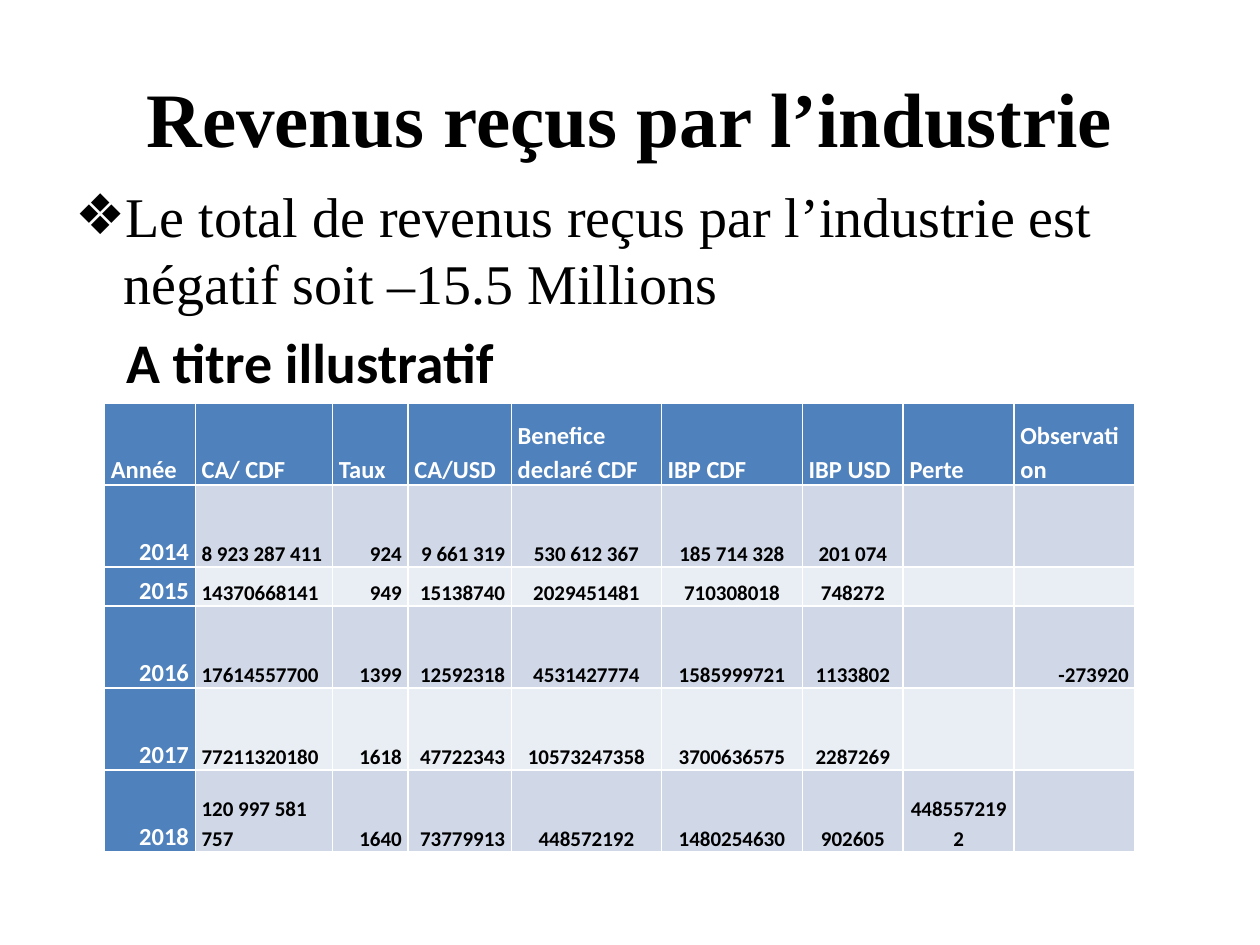
"""Build the slide on the revenues received by the industry."""
from lxml import etree
from pptx import Presentation
from pptx.dml.color import RGBColor
from pptx.enum.text import MSO_ANCHOR, PP_ALIGN
from pptx.oxml.ns import qn
from pptx.util import Inches, Pt

LEFT, CENTER, RIGHT = PP_ALIGN.LEFT, PP_ALIGN.CENTER, PP_ALIGN.RIGHT
MIDDLE, BOTTOM = MSO_ANCHOR.MIDDLE, MSO_ANCHOR.BOTTOM

COLORS = {"text": "000000", "header": "4F81BD", "header_text": "FFFFFF",
          "odd_row": "D0D8E8", "even_row": "E9EDF4"}
SERIF, SANS = "Times New Roman", "Calibri"

HEADINGS = ["Année", "CA/ CDF", "Taux", "CA/USD", "Benefice declaré CDF",
            "IBP CDF", "IBP USD", "Perte", "Observation"]
YEARS = [
    ["2014", "8 923 287 411", "924", "9 661 319", "530 612 367",
     "185 714 328", "201 074", "", ""],
    ["2015", "14370668141", "949", "15138740", "2029451481",
     "710308018", "748272", "", ""],
    ["2016", "17614557700", "1399", "12592318", "4531427774",
     "1585999721", "1133802", "", "-273920"],
    ["2017", "77211320180", "1618", "47722343", "10573247358",
     "3700636575", "2287269", "", ""],
    ["2018", "120 997 581 757", "1640", "73779913", "448572192",
     "1480254630", "902605", "4485572192", ""],
]
COLUMN_WIDTHS = [0.72, 1.09, 0.6, 0.82, 1.19, 1.12, 0.8, 0.88, 0.96]
ROW_HEIGHTS = [0.65, 0.65, 0.31, 0.65, 0.65, 0.65]
COLUMN_ALIGNS = [RIGHT, LEFT, RIGHT, RIGHT, CENTER, CENTER, CENTER, CENTER, RIGHT]
CELL_FORMAT = {"margin_left": Inches(0.05), "margin_right": Inches(0.05),
               "margin_top": 0, "margin_bottom": 0, "vertical_anchor": BOTTOM}


class SlideBuilder:
    """Holds the current slide and its style."""

    def __init__(self, slide):
        """Keep the slide to fill."""
        self.slide = slide

    def apply(self, target, values):
        """Set each attribute from a dict of format values."""
        for attribute, value in values.items():
            setattr(target, attribute, value)

    def place(self, placeholder, left, top, width, height):
        """Move and size a placeholder."""
        self.apply(placeholder, {"left": Inches(left), "top": Inches(top),
                                 "width": Inches(width), "height": Inches(height)})

    def add_text(self, paragraph, text, size, font=SANS, color="text", bold=False):
        """Add a formatted run to a paragraph."""
        run = paragraph.add_run()
        run.text = text
        self.apply(run.font, {"size": Pt(size), "name": font, "bold": bold})
        run.font.color.rgb = RGBColor.from_string(COLORS[color])

    def title(self, text, box):
        """Fill the title placeholder."""
        heading = self.slide.shapes.title
        self.place(heading, *box)
        heading.text_frame.vertical_anchor = MIDDLE
        paragraph = heading.text_frame.paragraphs[0]
        paragraph.alignment = CENTER
        self.add_text(paragraph, text, 44, SERIF, bold=True)

    def body(self, statement, caption, box):
        """Fill the body with a bulleted statement and a plain caption."""
        body = self.slide.placeholders[1]
        self.place(body, *box)
        frame = body.text_frame
        point, example = frame.paragraphs[0], frame.add_paragraph()
        self.indent(point, 0.38, -0.38, "❖")
        self.add_text(point, statement, 32, SERIF)
        self.indent(example, 0.4, 0)
        self.add_text(example, caption, 32, bold=True)

    def indent(self, paragraph, margin, first_line, bullet=None):
        """Set the indents and the bullet of a paragraph."""
        properties = paragraph._p.get_or_add_pPr()
        properties.set("marL", str(Inches(margin)))
        properties.set("indent", str(Inches(first_line)))
        if bullet:
            etree.SubElement(properties, qn("a:buChar")).set("char", bullet)
        else:
            etree.SubElement(properties, qn("a:buNone"))

    def table(self, rows, left, top):
        """Add the table with a header row and a header column."""
        table = self.slide.shapes.add_table(
            len(rows), len(COLUMN_WIDTHS), Inches(left), Inches(top),
            Inches(sum(COLUMN_WIDTHS)), Inches(sum(ROW_HEIGHTS))).table
        table.first_col = True
        for column, width in zip(table.columns, COLUMN_WIDTHS):
            column.width = Inches(width)
        for row, height in zip(table.rows, ROW_HEIGHTS):
            row.height = Inches(height)
        for row_index, values in enumerate(rows):
            for column_index, value in enumerate(values):
                self.cell(table.cell(row_index, column_index), value,
                          row_index, column_index)

    def cell(self, cell, value, row_index, column_index):
        """Fill one table cell according to its row and column."""
        is_header = row_index == 0 or column_index == 0
        band = "odd_row" if row_index % 2 else "even_row"
        self.apply(cell, CELL_FORMAT)
        cell.fill.solid()
        cell.fill.fore_color.rgb = RGBColor.from_string(
            COLORS["header" if is_header else band])
        if value:
            paragraph = cell.text_frame.paragraphs[0]
            align = COLUMN_ALIGNS[column_index] if row_index else LEFT
            self.apply(paragraph, {"alignment": align, "line_spacing": 1.15})
            self.add_text(paragraph, value, 14 if is_header else 12,
                          color="header_text" if is_header else "text", bold=True)


def main():
    """Build and save the presentation."""
    deck = Presentation()
    deck.slide_width, deck.slide_height = Inches(10), Inches(7.5)
    builder = SlideBuilder(deck.slides.add_slide(deck.slide_layouts[1]))
    builder.title("Revenus reçus par l’industrie", (0.5, 0.3, 9, 1.25))
    builder.body("Le total de revenus reçus par l’industrie est négatif "
                 "soit –15.5 Millions", "A titre illustratif", (0.5, 1.39, 9, 5.31))
    builder.table([HEADINGS] + YEARS, 0.83, 3.2)
    deck.save("out.pptx")


if __name__ == "__main__":
    main()
